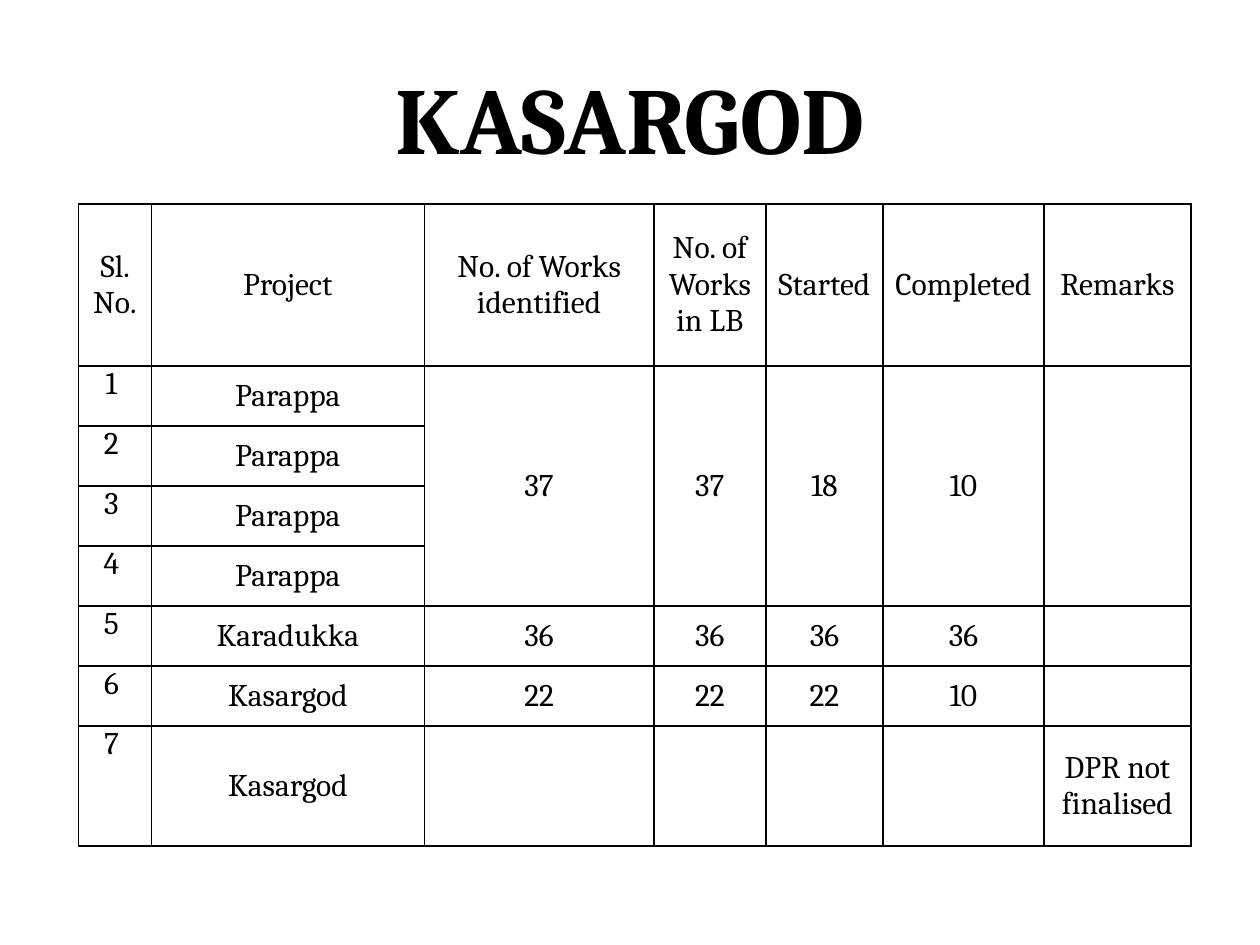
import pptx
import pptx.dml.color
import pptx.enum.text
import pptx.oxml
import pptx.oxml.ns
import pptx.util

Pt = pptx.util.Pt
MIDDLE = pptx.enum.text.MSO_ANCHOR.MIDDLE
TOP = pptx.enum.text.MSO_ANCHOR.TOP
CENTER = pptx.enum.text.PP_ALIGN.CENTER


def color(value):
    return pptx.dml.color.RGBColor.from_string(value)


class SlideBuilder:
    font_name = "Cambria"
    ink = "000000"
    title_size = 54
    table_size = 18
    border_width = 1

    def __init__(self, presentation):
        self.slide = presentation.slides.add_slide(presentation.slide_layouts[5])

    def style(self, paragraph, size, bold=False):
        paragraph.alignment = CENTER
        paragraph.font.name = self.font_name
        paragraph.font.size = Pt(size)
        paragraph.font.bold = bold
        paragraph.font.color.rgb = color(self.ink)

    def title(self, text, left, top, width, height):
        shape = self.slide.shapes.title
        shape.left, shape.top = Pt(left), Pt(top)
        shape.width, shape.height = Pt(width), Pt(height)
        shape.text_frame.text = text
        shape.text_frame.vertical_anchor = MIDDLE
        self.style(shape.text_frame.paragraphs[0], self.title_size, bold=True)

    def borders(self, cell):
        properties = cell._tc.get_or_add_tcPr()
        for side in ("lnL", "lnR", "lnT", "lnB"):
            properties.append(pptx.oxml.parse_xml(
                f'<a:{side} {pptx.oxml.ns.nsdecls("a")} w="{Pt(self.border_width)}">'
                f'<a:solidFill><a:srgbClr val="{self.ink}"/></a:solidFill></a:{side}>'))

    def cell(self, cell, text, anchor):
        cell.margin_left = cell.margin_right = Pt(3.6)
        cell.margin_top = cell.margin_bottom = 0
        cell.vertical_anchor = anchor
        self.borders(cell)
        cell.fill.background()
        cell.text_frame.text = text
        paragraph = cell.text_frame.paragraphs[0]
        self.style(paragraph, self.table_size)
        paragraph.space_after = Pt(10)

    def table(self, rows, left, top, widths, heights):
        table = self.slide.shapes.add_table(
            len(rows), len(widths), Pt(left), Pt(top),
            Pt(sum(widths)), Pt(sum(heights))).table
        table.first_row = table.horz_banding = False
        for column, width in zip(table.columns, widths):
            column.width = Pt(width)
        for row, height in zip(table.rows, heights):
            row.height = Pt(height)
        for row_index, texts in enumerate(rows):
            for column_index, text in enumerate(texts):
                # Serial numbers sit at the top of their cells
                is_serial = row_index > 0 and column_index == 0
                self.cell(table.cell(row_index, column_index), text,
                          TOP if is_serial else MIDDLE)
        return table


HEADER = ["Sl. No.", "Project", "No. of Works identified", "No. of Works in LB",
          "Started", "Completed", "Remarks"]
# Project, works identified, works in LB, started, completed, remarks
PROJECTS = [
    ["Parappa", "37", "37", "18", "10", ""],
    ["Parappa"] + [""] * 5,
    ["Parappa"] + [""] * 5,
    ["Parappa"] + [""] * 5,
    ["Karadukka", "36", "36", "36", "36", ""],
    ["Kasargod", "22", "22", "22", "10", ""],
    ["Kasargod", "", "", "", "", "DPR not finalised"],
]
COLUMN_WIDTHS = [41.7, 156, 131.2, 64, 66.9, 92, 84]
ROW_HEIGHTS = [92.6] + [34.3] * 6 + [68.5]


def main():
    presentation = pptx.Presentation()
    presentation.slide_width, presentation.slide_height = Pt(720), Pt(540)
    builder = SlideBuilder(presentation)

    # Title
    builder.title("KASARGOD", 36, 21.6, 648, 90)

    # Works table
    rows = [HEADER] + [[f"{number} "] + project
                       for number, project in enumerate(PROJECTS, 1)]
    table = builder.table(rows, 44.8, 116.6, COLUMN_WIDTHS, ROW_HEIGHTS)

    # The four Parappa rows share their figures and remarks
    for column in range(2, len(HEADER)):
        table.cell(1, column).merge(table.cell(4, column))

    presentation.save("out.pptx")


if __name__ == "__main__":
    main()
